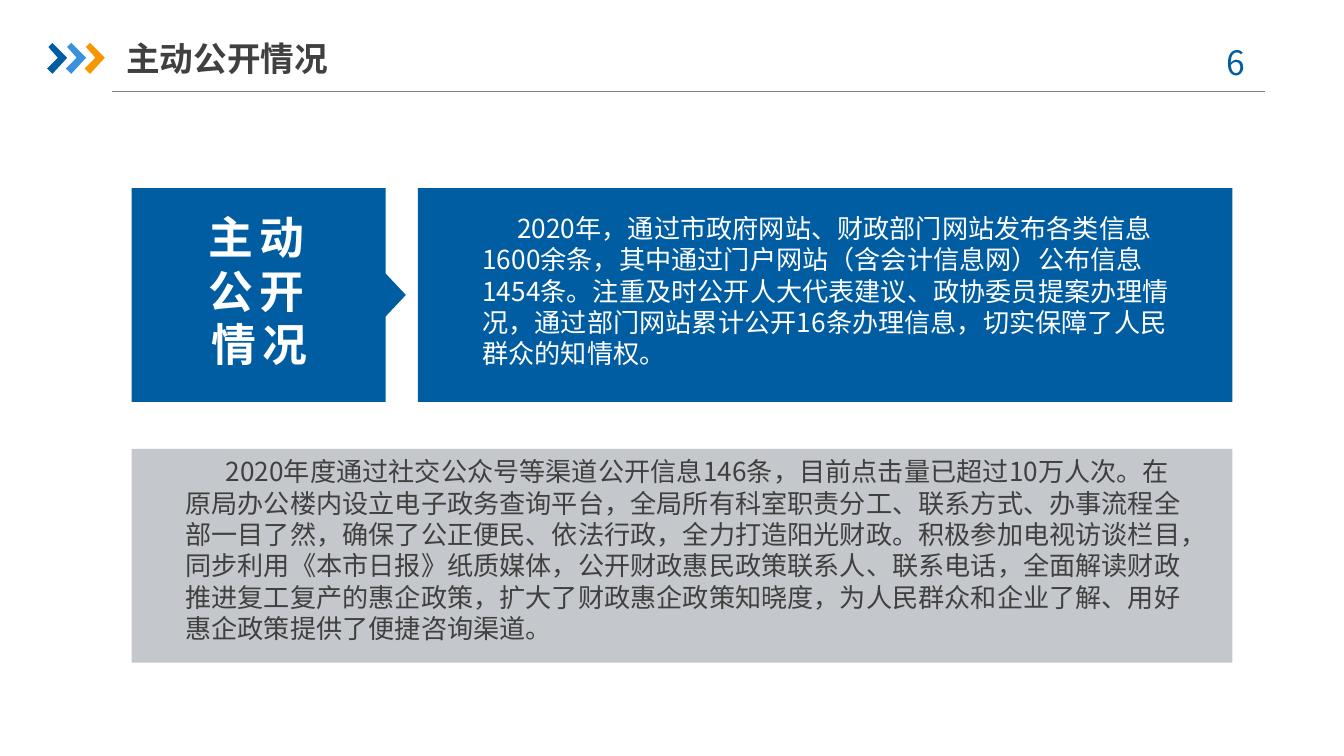
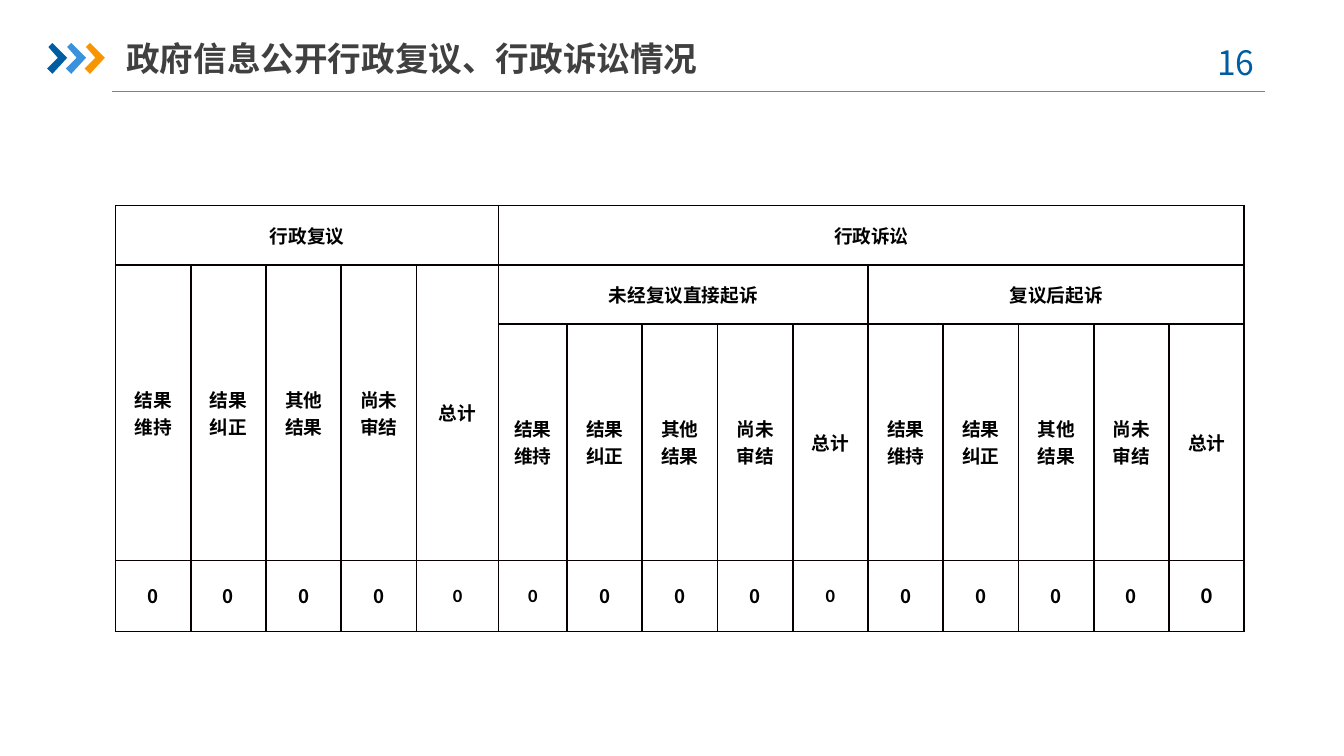
from lxml.etree import SubElement
from pptx import Presentation
from pptx.dml.color import RGBColor as Rgb
from pptx.enum.shapes import MSO_CONNECTOR as Connector, MSO_SHAPE as Shape
from pptx.enum.text import MSO_ANCHOR as Anchor, PP_ALIGN as Align
from pptx.oxml import parse_xml
from pptx.oxml.ns import nsdecls, qn
from pptx.util import Inches, Pt

COLORS = {
    "blue": "005DA2",
    "sky": "3992DB",
    "orange": "F79600",
    "dark": "404040",
    "rule": "808080",
    "gray": "C4C7CB",
    "white": "FFFFFF",
    "black": "000000",
    "border": "080000",
}
CJK = "Noto Sans CJK SC"
LATIN = "Calibri"
OUTCOMES = ["结果维持", "结果纠正", "其他结果", "尚未审结", "总计"]

WEBSITE_TEXT = (
    "2020年，通过市政府网站、财政部门网站发布各类信息1600余条，"
    "其中通过门户网站（含会计信息网）公布信息1454条。"
    "注重及时公开人大代表建议、政协委员提案办理情况，"
    "通过部门网站累计公开16条办理信息，切实保障了人民群众的知情权。"
)
CHANNEL_TEXT = (
    "2020年度通过社交公众号等渠道公开信息146条，目前点击量已超过10万人次。"
    "在原局办公楼内设立电子政务查询平台，全局所有科室职责分工、联系方式、"
    "办事流程全部一目了然，确保了公正便民、依法行政，全力打造阳光财政。"
    "积极参加电视访谈栏目，同步利用《本市日报》纸质媒体，"
    "公开财政惠民政策联系人、联系电话，全面解读财政推进复工复产的惠企政策，"
    "扩大了财政惠企政策知晓度，为人民群众和企业了解、"
    "用好惠企政策提供了便捷咨询渠道。"
)


def rgb(name):
    """Return the palette colour of that name."""
    return Rgb.from_string(COLORS[name])


def write(frame, text, size, color, font=CJK, bold=False, align=Align.LEFT,
          anchor=Anchor.TOP, spacing=None, indent=0, tracking=0):
    """Put one formatted paragraph into a text frame or table cell."""
    frame.vertical_anchor = anchor
    paragraph = getattr(frame, "text_frame", frame).paragraphs[0]
    paragraph.alignment = align
    if spacing:
        paragraph.line_spacing = Pt(size * spacing)
    if indent:
        properties = paragraph._p.get_or_add_pPr()
        properties.set("marL", "0")
        properties.set("indent", str(Inches(indent)))
    run = paragraph.add_run()
    run.text = text
    run.font.size = Pt(size)
    run.font.bold = bold
    run.font.color.rgb = rgb(color)
    run.font.name = font
    run_properties = run._r.get_or_add_rPr()
    SubElement(run_properties, qn("a:ea")).set("typeface", CJK)
    if tracking:
        run_properties.set("spc", str(tracking * 100))


def add_text(slide, box, text, size, color, insets=(0, 0), **style):
    """Add a wrapping text box with horizontal and vertical insets."""
    frame = slide.shapes.add_textbox(*map(Inches, box)).text_frame
    frame.word_wrap = True
    frame.margin_left = frame.margin_right = Inches(insets[0])
    frame.margin_top = frame.margin_bottom = Inches(insets[1])
    write(frame, text, size, color, **style)


def paint(shape, color):
    """Give a shape a flat fill without line or shadow."""
    shape.shadow.inherit = False
    shape.fill.solid()
    shape.fill.fore_color.rgb = rgb(color)
    shape.line.fill.background()


def add_panel(slide, box, color):
    """Add a flat rectangle."""
    paint(slide.shapes.add_shape(Shape.RECTANGLE, *map(Inches, box)), color)


def add_outline(slide, left, top, points, color):
    """Add a closed outline from points relative to its corner."""
    corners = [(Inches(left + x), Inches(top + y)) for x, y in points]
    builder = slide.shapes.build_freeform(*corners[0], scale=1.0)
    builder.add_line_segments(corners[1:], close=True)
    paint(builder.convert_to_shape(), color)


def add_header(slide, box, title, title_width, number):
    """Place the chevrons, title, page number and rule of every slide."""
    left, top, width, height = box
    chevron = [(0.01, 0.03), (0.04, 0), (0.15, 0.11),
               (0.04, 0.23), (0, 0.19), (0.08, 0.11)]
    rule = slide.shapes.add_connector(
        Connector.STRAIGHT, Inches(left + 0.48), Inches(top + height),
        Inches(left + width), Inches(top + height))
    rule.line.color.rgb = rgb("rule")
    rule.line.width = Pt(0.75)
    SubElement(rule._element.spPr, qn("a:effectLst"))
    for index, color in enumerate(("blue", "sky", "orange")):
        add_outline(slide, left + index * 0.14, top + 0.1, chevron, color)
    add_text(slide, (left + width - 0.55, top + 0.04, 0.73, 0.4),
             f"{number} ", 18, "blue", insets=(0.1, 0.05),
             align=Align.CENTER, spacing=1.2)
    add_text(slide, (left + 0.59, top, title_width, 0.42), title, 18, "dark",
             insets=(0, 0.05), bold=True, anchor=Anchor.MIDDLE)


def add_website_band(slide, box):
    """Place the arrow label and the website paragraph beside it."""
    left, top, width, height = box
    label, tip, middle, half = 1.89, 2.04, height / 2, 0.16
    panel = 2.13
    add_panel(slide, (left + panel, top, width - panel, height), "blue")
    add_outline(slide, left, top, [
        (0, 0), (label, 0), (label, middle - half), (tip, middle),
        (label, middle + half), (label, height), (0, height)], "blue")
    add_text(slide, (left + 2.61, top + 0.18, 5.2, 1.18), WEBSITE_TEXT, 14,
             "white", spacing=1.2, indent=0.26)
    add_text(slide, (left + 0.47, top + 0.16, 0.96, 1.21), "主动公开情况", 24,
             "white", bold=True, align=Align.CENTER, spacing=1.2, tracking=3)


def add_channel_band(slide, box):
    """Place the gray band with the paragraph on other channels."""
    left, top, width, height = box
    add_panel(slide, box, "gray")
    add_text(slide, (left + 0.4, top + 0.05, 7.48, 1.41), CHANNEL_TEXT, 14,
             "dark", spacing=1.2, indent=0.3)


def frame_cell(cell):
    """Clear a cell's fill, set its margins and draw its four borders."""
    cell.margin_left = cell.margin_right = Pt(5.4)
    cell.margin_top = cell.margin_bottom = 0
    cell.fill.background()
    properties = cell._tc.get_or_add_tcPr()
    for index, side in enumerate("LRTB"):
        properties.insert(index, parse_xml(
            f'<a:ln{side} {nsdecls("a")} w="{Pt(1)}"><a:solidFill>'
            f'<a:srgbClr val="{COLORS["border"]}"/></a:solidFill></a:ln{side}>'))


def add_case_table(slide, box):
    """Place the table of reviews and lawsuits."""
    columns = [0.56] * 4 + [0.61, 0.51] + [0.56] * 9
    rows = [0.44, 0.44, 1.76, 0.53]
    graphic = slide.shapes.add_table(len(rows), len(columns), *map(Inches, box))
    table = graphic.table
    table.first_row = table.horz_banding = False
    for column, width in zip(table.columns, columns):
        column.width = Inches(width)
    for row, height in zip(table.rows, rows):
        row.height = Inches(height)
    for cell in table.iter_cells():
        frame_cell(cell)

    def fill(row, column, text, rowspan=1, colspan=1, size=10, font=LATIN):
        """Merge the spanned cells and write their text."""
        cell = table.cell(row, column)
        if rowspan * colspan > 1:
            cell.merge(table.cell(row + rowspan - 1, column + colspan - 1))
        write(cell, text, size, "black", font=font, bold=True,
              align=Align.CENTER, anchor=Anchor.MIDDLE)

    fill(0, 0, "行政复议", colspan=5)
    fill(0, 5, "行政诉讼", colspan=10)
    fill(1, 5, "未经复议直接起诉", colspan=5)
    fill(1, 10, "复议后起诉", colspan=5)
    for index, outcome in enumerate(OUTCOMES):
        fill(1, index, outcome, rowspan=2)
        fill(2, index + 5, outcome)
        fill(2, index + 10, outcome)
    last = len(columns) - 1
    for column in range(len(columns)):
        fill(3, column, "0", size=12 if column == last else 10,
             font=LATIN if column in (4, 5, 9, last) else CJK)


def add_page(deck, title, title_width, number):
    """Add a blank slide with the shared header."""
    slide = deck.slides.add_slide(deck.slide_layouts[6])
    add_header(slide, (0.35, 0.22, 9.06, 0.46), title, title_width, number)
    return slide


def main():
    """Build both slides and save the deck."""
    deck = Presentation()
    deck.slide_width = Inches(10)
    deck.slide_height = deck.slide_width * 9 // 16
    disclosure = add_page(deck, "主动公开情况", 2.33, 6)
    add_website_band(disclosure, (0.98, 1.4, 8.19, 1.59))
    add_channel_band(disclosure, (0.98, 3.34, 8.19, 1.59))
    cases = add_page(deck, "政府信息公开行政复议、行政诉讼情况", 4.51, 16)
    add_case_table(cases, (0.86, 1.53, 8.4, 3.17))
    deck.save("out.pptx")


if __name__ == "__main__":
    main()
